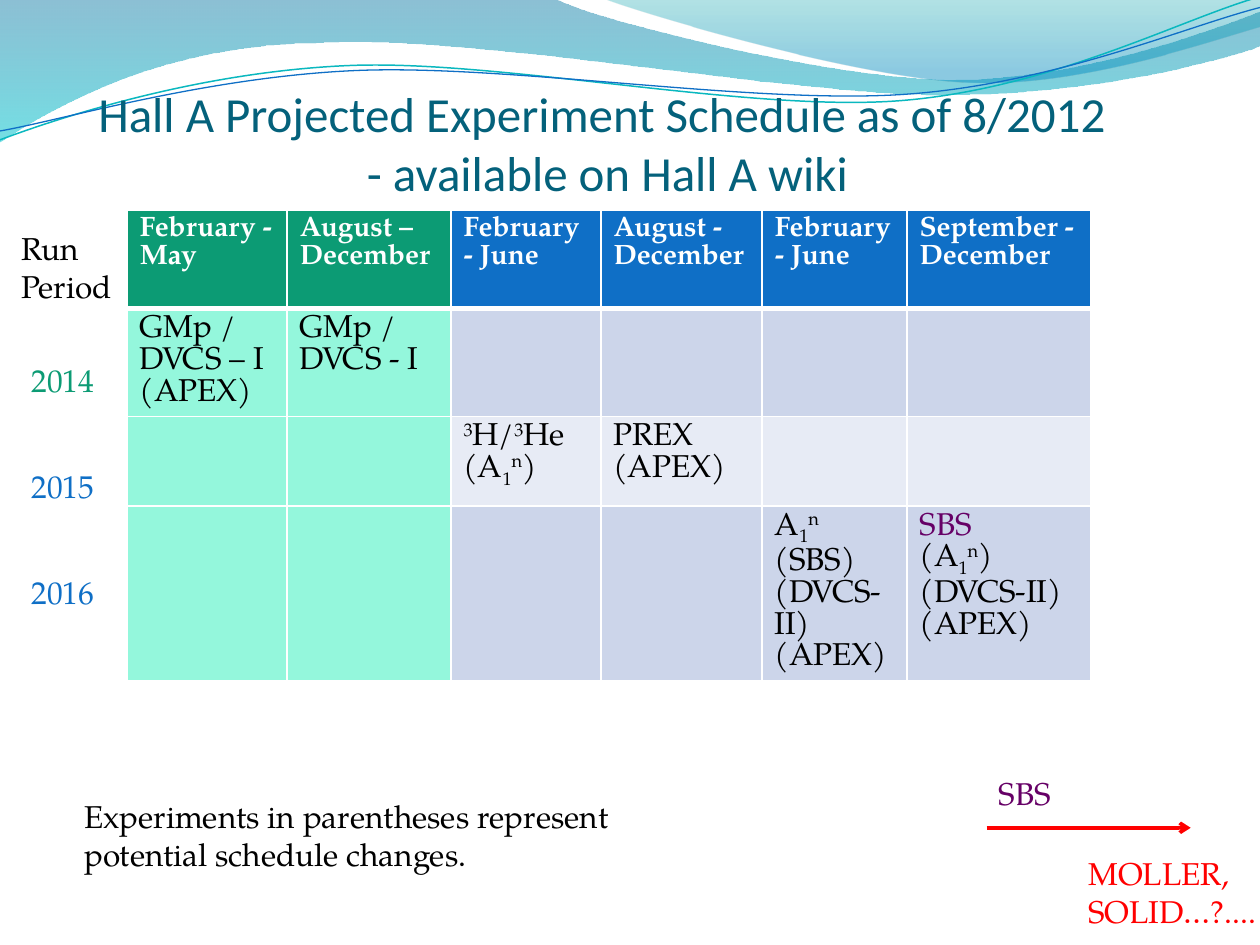
import math
from dataclasses import dataclass
from lxml import etree
from pptx import Presentation, util as u
from pptx.dml.color import RGBColor
from pptx.enum import shapes, text
from pptx.oxml.ns import qn

GRID_COLS, GRID_ROWS = 10, 7.5
W, H = u.Inches(10), u.Inches(7.5)
SERIF = "TeX Gyre Pagella"
GREEN, BLUE, PURPLE, RED = "0C9B74", "0F6FC6", "660066", "FF0000"
BLACK, WHITE, MINT = "000000", "FFFFFF", "94F7DC"
BANDS = ("CCD5EA", "E7EBF5")
TILT = -2.7


@dataclass
class Wave:
    """start point, then segments of 2 (line) or 6 (cubic curve) numbers"""
    start: tuple
    segments: list
    stops: tuple = ()
    line: tuple = ()
    pivot: tuple = ()


@dataclass
class Label:
    words: str
    color: str
    box: tuple


WAVES = [
    Wave((0, -0.01), [
        (4.4, -0.01), (4.76, 0.17, 6.64, 0.63, 7.58, 0.63),
        (8.53, 0.63, 9.58, 0.26, 10, 0.09), (10.01, 0.36),
        (9.83, 0.44, 8.7, 0.76, 7.46, 0.75), (6.22, 0.75, 3.82, 0.28, 2.57, 0.34),
        (1.29, 0.35, 0.46, 0.83, -0.01, 1.13)],
        stops=((0, "0074A1", 45), (1, "00C6CF", 55))),
    Wave((4.79, -0.01), [
        (5.09, 0.11, 6.82, 0.62, 7.69, 0.65), (8.56, 0.69, 9.61, 0.32, 10, 0.21),
        (10, 0)],
        stops=((0, "00A1A9", 30), (0.8, "008BBF", 45))),
    Wave((0, 1.11), [
        (0.48, 0.93, 1.58, 0.57, 2.77, 0.52), (3.95, 0.47, 5.93, 0.89, 7.13, 0.8),
        (8.33, 0.71, 9.38, 0.15, 9.98, -0.02)], line=("0AB8BF", 0.85), pivot=(4.99, 0.57)),
    Wave((0, 1.04), [
        (0.47, 0.96, 1.64, 0.61, 2.83, 0.56), (4.03, 0.51, 5.97, 0.83, 7.17, 0.75),
        (8.36, 0.67, 9.41, 0.21, 10, 0.06)], line=(BLUE, 0.75), pivot=(5, 0.59)),
]

COL_WIDTHS = (1.27, 1.3, 1.19, 1.28, 1.15, 1.46)
ROW_HEIGHTS = (0.78, 0.85, 0.71, 1.39)
HEADERS = ("February - May", "August – December", "February - June",
           "August - December", "February - June", "September - December")
# ^ raises and _ lowers the next character
EXPERIMENTS = {
    (1, 0): ["GMp / DVCS – I", "(APEX)"],
    (1, 1): ["GMp / DVCS - I"],
    (2, 2): ["^3H/^3He", "(A_1^n)"],
    (2, 3): ["PREX", "(APEX)"],
    (3, 4): ["A_1^n", "(SBS)", "(DVCS-II)", "(APEX)"],
    (3, 5): ["SBS", "(A_1^n)", "(DVCS-II)", "(APEX)"],
}

LABELS = [
    Label("MOLLER, SOLID…?....", RED, (8.54, 6.73, 1.6, 0.7)),
    *(Label(year, color, (0.15, 2.82 + 0.84 * i, 0.81, 0.4)) for i, (year, color)
      in enumerate((("2014", GREEN), ("2015", BLUE), ("2016", BLUE)))),
    Label("SBS", PURPLE, (7.83, 6.09, 0.71, 0.4)),
    Label("Experiments in parentheses represent potential schedule changes.",
          BLACK, (0.57, 6.28, 5.24, 0.7)),
    Label("Run Period", BLACK, (0.07, 1.77, 0.98, 0.71)),
]


def col(n: float) -> int:
    return round(n * W / GRID_COLS)


def row(n: float) -> int:
    return round(n * H / GRID_ROWS)


def place(left: float, top: float, width: float, height: float) -> tuple:
    return col(left), row(top), col(width), row(height)


def rgb(color: str) -> RGBColor:
    return RGBColor.from_string(color)


def style(r, color: str, size: float = 18, name: str = SERIF, bold: bool = False) -> None:
    for key, value in {"size": u.Pt(size), "name": name, "bold": bold}.items():
        setattr(r.font, key, value)
    r.font.color.rgb = rgb(color)


def level(point: tuple, pivot: tuple) -> tuple:
    """Turn a point back by the tilt, which the shape's rotation then adds."""
    angle = math.radians(-TILT)
    dx, dy = point[0] - pivot[0], point[1] - pivot[1]
    return (pivot[0] + dx * math.cos(angle) - dy * math.sin(angle),
            pivot[1] + dx * math.sin(angle) + dy * math.cos(angle))


def bend(sp, segments: list) -> None:
    """Join each three lines that stand for a curve into one cubic curve."""
    lines = iter(list(sp.element.iter(qn("a:lnTo"))))
    for seg in segments:
        group = [next(lines) for _ in range(len(seg) // 2)]
        if len(group) == 3:
            curve = etree.Element(qn("a:cubicBezTo"))
            group[0].addprevious(curve)
            for line in group:
                curve.append(line[0])
                line.getparent().remove(line)


def draw_wave(s, wave: Wave) -> None:
    points = [wave.start] + [seg[i:i + 2] for seg in wave.segments
                             for i in range(0, len(seg), 2)]
    if wave.pivot:
        points = [level(point, wave.pivot) for point in points]
    first, *rest = [(col(x), row(y)) for x, y in points]
    builder = s.shapes.build_freeform(*first)
    builder.add_line_segments(rest, close=bool(wave.stops))
    sp = builder.convert_to_shape()
    bend(sp, wave.segments)
    sp.shadow.inherit = False
    if wave.line:
        sp.rotation = TILT
        sp.fill.background()
        sp.line.color.rgb = rgb(wave.line[0])
        sp.line.width = u.Pt(wave.line[1])
        return
    sp.line.fill.background()
    sp.fill.gradient()
    sp.fill.gradient_angle = 270
    for stop, (position, color, _) in zip(sp.fill.gradient_stops, wave.stops):
        stop.position = position
        stop.color.rgb = rgb(color)
    for clr, (_, _, opacity) in zip(sp.element.iter(qn("a:srgbClr")), wave.stops):
        etree.SubElement(clr, qn("a:alpha"), val=str(opacity * 1000))


def add_marked_text(p, words: str, color: str, **kw) -> None:
    runs, base = [["", 0]], 0
    for ch in words:
        if ch in "^_":
            base = {"^": 30, "_": -25}[ch]
            continue
        if base == runs[-1][1] == 0:
            runs[-1][0] += ch
        else:
            runs.append([ch, base])
        base = 0
    for part, shift in (run for run in runs if run[0]):
        r = p.add_run()
        r.text = part
        style(r, color, **kw)
        if shift:
            r._r.get_or_add_rPr().set("baseline", str(shift * 1000))


def set_borders(cell, top: float, bottom: float) -> None:
    tc_pr = cell._tc.get_or_add_tcPr()
    for i, (side, width) in enumerate(zip("LRTB", (1, 1, top, bottom))):
        ln = etree.Element(qn(f"a:ln{side}"), w=str(u.Pt(width)))
        fill = etree.SubElement(ln, qn("a:solidFill"))
        etree.SubElement(fill, qn("a:srgbClr"), val=WHITE)
        tc_pr.insert(i, ln)


def draw_schedule(s) -> None:
    box = place(1.01, 1.67, sum(COL_WIDTHS), sum(ROW_HEIGHTS))
    table = s.shapes.add_table(len(ROW_HEIGHTS), len(COL_WIDTHS), *box).table
    for c, width in enumerate(COL_WIDTHS):
        table.columns[c].width = col(width)
    for r, height in enumerate(ROW_HEIGHTS):
        table.rows[r].height = row(height)
        for c in range(len(COL_WIDTHS)):
            cell, header, early = table.cell(r, c), r == 0, c < 2
            cell.fill.solid()
            cell.fill.fore_color.rgb = rgb((GREEN if early else BLUE) if header else
                                           MINT if early else BANDS[(r - 1) % 2])
            set_borders(cell, 3 if r == 1 else 1, 3 if header else 1)
            lines = [HEADERS[c]] if header else EXPERIMENTS.get((r, c), [])
            for i, words in enumerate(lines):
                tf = cell.text_frame
                p = tf.add_paragraph() if i else tf.paragraphs[0]
                color = WHITE if header else PURPLE if words == "SBS" else BLACK
                add_marked_text(p, words, color, size=16 if header else 18, bold=header)


def draw_label(s, label: Label) -> None:
    tf = s.shapes.add_textbox(*place(*label.box)).text_frame
    tf.word_wrap = True
    tf.auto_size = text.MSO_AUTO_SIZE.SHAPE_TO_FIT_TEXT
    add_marked_text(tf.paragraphs[0], label.words, label.color)


def draw_title(s) -> None:
    title = s.shapes.title
    title.element.getparent().append(title.element)  # in front of the waves
    title.left, title.top, title.width, title.height = place(-0.18, 0.35, 10, 1.25)
    tf = title.text_frame
    for key, value in {"margin_left": 0, "margin_right": 0, "margin_top": u.Inches(0.05),
                       "margin_bottom": 0, "word_wrap": True,
                       "vertical_anchor": text.MSO_ANCHOR.BOTTOM}.items():
        setattr(tf, key, value)
    p = tf.paragraphs[0]
    p.text = "Hall A Projected Experiment Schedule as of 8/2012 \v- available on Hall A wiki"
    p.alignment = text.PP_ALIGN.CENTER
    for r in p.runs:
        style(r, "04617B", 28, "Calibri")


def draw_arrow(s) -> None:
    y = row(6.57)
    arrow = s.shapes.add_connector(shapes.MSO_CONNECTOR.STRAIGHT, col(7.83), y, col(9.45), y)
    arrow.line.color.rgb = rgb(RED)
    arrow.line.width = u.Pt(2)
    etree.SubElement(arrow.line._get_or_add_ln(), qn("a:tailEnd"), type="arrow")
    etree.SubElement(arrow.element.spPr, qn("a:effectLst"))


prs = Presentation()
prs.slide_width, prs.slide_height = W, H
s = prs.slides.add_slide(prs.slide_layouts[5])
for wave in WAVES:
    draw_wave(s, wave)
draw_title(s)
draw_schedule(s)
draw_arrow(s)
for label in LABELS:
    draw_label(s, label)
prs.save("out.pptx")
